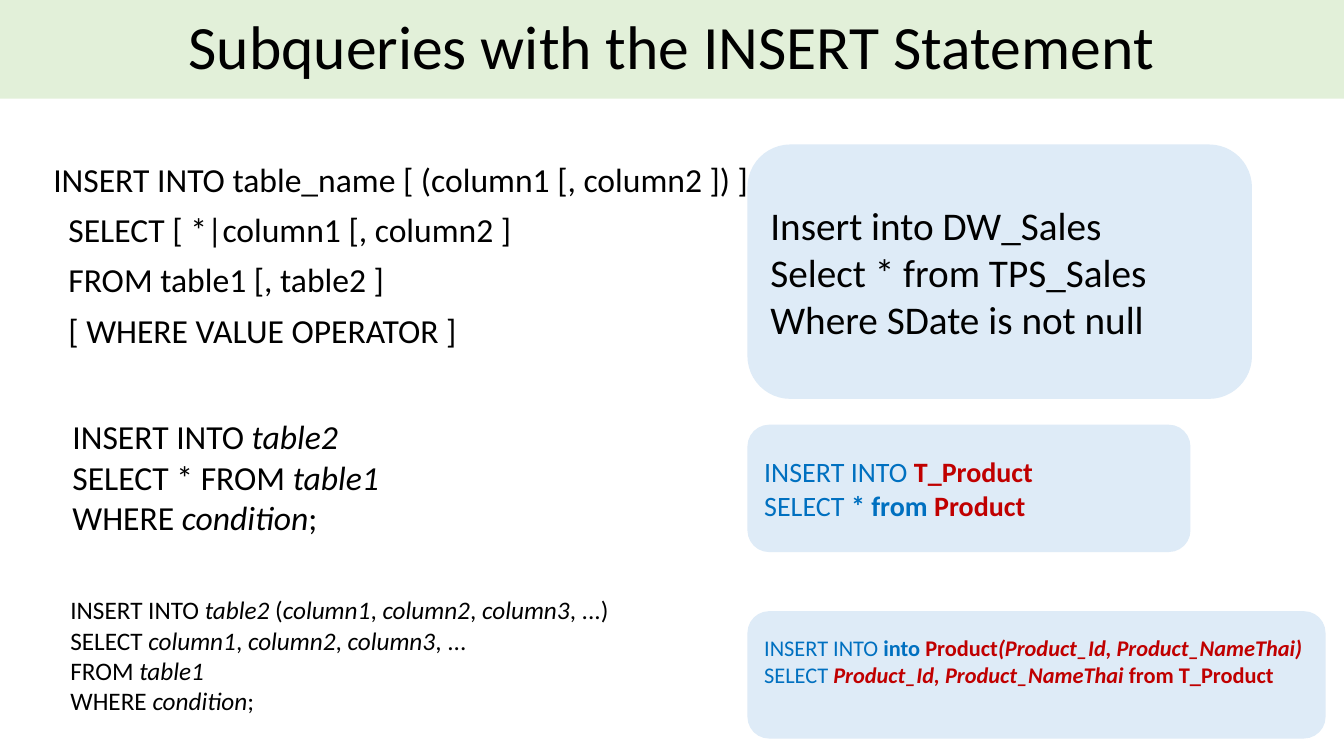
"""Build a slide on subqueries with the INSERT statement."""
from pptx import Presentation
from pptx.dml.color import RGBColor
from pptx.enum.shapes import MSO_SHAPE as Shape
from pptx.enum.text import MSO_ANCHOR as Anchor, PP_ALIGN as Align
from pptx.util import Inches, Pt

FONT = "Calibri"
BLACK = RGBColor(0x00, 0x00, 0x00)
BLUE = RGBColor(0x00, 0x70, 0xC0)
RED = RGBColor(0xC0, 0x00, 0x00)
PALE_GREEN = RGBColor(0xE2, 0xF0, 0xD9)
PALE_BLUE = RGBColor(0xDE, 0xEB, 0xF7)

PLAIN = (BLACK, False, False)
ITALIC = (BLACK, False, True)
KEYWORD = (BLUE, False, False)
BOLD_KEYWORD = (BLUE, True, False)
NAME = (RED, True, False)
ITALIC_NAME = (RED, True, True)

EXAMPLE_LEFT = 7.42

GENERAL_SYNTAX = [
    [("INSERT INTO table_name [ (column1 [, column2 ]) ]", PLAIN)],
    [("SELECT [ *|column1 [, column2 ]", PLAIN)],
    [("FROM table1 [, table2 ]", PLAIN)],
    [("[ WHERE VALUE OPERATOR ]", PLAIN)],
]
WHERE_LINE = [("WHERE ", PLAIN), ("condition", ITALIC), (";", PLAIN)]
COLUMNS = [("column1", ITALIC), (", ", PLAIN), ("column2", ITALIC),
           (", ", PLAIN), ("column3", ITALIC)]
ALL_COLUMNS_SYNTAX = [
    [("INSERT INTO ", PLAIN), ("table2", ITALIC)],
    [("SELECT * FROM ", PLAIN), ("table1", ITALIC)],
    WHERE_LINE,
]
SOME_COLUMNS_SYNTAX = [
    [("INSERT INTO ", PLAIN), ("table2 ", ITALIC), ("(", PLAIN), *COLUMNS, (", ...)", PLAIN)],
    [("SELECT ", PLAIN), *COLUMNS, (", ...", PLAIN)],
    [("FROM ", PLAIN), ("table1", ITALIC)],
    WHERE_LINE,
]
SALES_EXAMPLE = [
    [("Insert into DW_Sales", PLAIN)],
    [("Select * from TPS_Sales", PLAIN)],
    [("Where SDate is not null", PLAIN)],
]
ALL_COLUMNS_EXAMPLE = [
    [("INSERT INTO ", KEYWORD), ("T_Product", NAME)],
    [("SELECT ", KEYWORD), ("* from ", BOLD_KEYWORD), ("Product", NAME)],
]
SOME_COLUMNS_EXAMPLE = [
    [("INSERT INTO ", KEYWORD), ("into ", BOLD_KEYWORD), ("Product", NAME),
     ("(Product_Id, Product_NameThai)", ITALIC_NAME)],
    [("SELECT ", KEYWORD), ("Product_Id, Product_NameThai ", ITALIC_NAME),
     ("from T_Product", NAME)],
]


def write_lines(text_frame, lines, size, align=Align.LEFT):
    """Write one paragraph per line and return the paragraphs."""
    text_frame.word_wrap = True
    paragraphs = []
    for index, line in enumerate(lines):
        paragraph = text_frame.add_paragraph() if index else text_frame.paragraphs[0]
        paragraph.alignment = align
        for text, (color, bold, italic) in line:
            run = paragraph.add_run()
            run.text = text
            run.font.name = FONT
            run.font.size = Pt(size)
            run.font.color.rgb = color
            run.font.bold = bold
            run.font.italic = italic
        paragraphs.append(paragraph)
    return paragraphs


def add_panel(slide, kind, box, color):
    """Add a plain filled shape with vertically centred text."""
    shape = slide.shapes.add_shape(kind, *map(Inches, box))
    shape.shadow.inherit = False
    shape.fill.solid()
    shape.fill.fore_color.rgb = color
    shape.line.color.rgb = color
    shape.line.width = Pt(1)
    shape.text_frame.vertical_anchor = Anchor.MIDDLE
    return shape


def add_title(slide, box, title):
    """Add the title band."""
    band = add_panel(slide, Shape.RECTANGLE, box, PALE_GREEN)
    band.line.fill.background()
    paragraph, = write_lines(band.text_frame, [[(title, PLAIN)]], 44, Align.CENTER)
    paragraph.line_spacing = 0.9


def add_syntax(slide, box, lines, size):
    """Add a syntax text block and return its paragraphs."""
    text_box = slide.shapes.add_textbox(*map(Inches, box))
    return write_lines(text_box.text_frame, lines, size)


def add_general_syntax(slide, box):
    """Add the general syntax with its clauses indented."""
    for index, paragraph in enumerate(add_syntax(slide, box, GENERAL_SYNTAX, 24)):
        paragraph.line_spacing = 0.9
        paragraph.space_before = Pt(10)
        indent = Inches(0.23 if index else 0.08)
        paragraph._p.get_or_add_pPr().set("marL", str(indent))


def add_example(slide, box, lines, size, bottom_margin=0.05):
    """Add a rounded panel holding an example statement."""
    panel = add_panel(slide, Shape.ROUNDED_RECTANGLE, box, PALE_BLUE)
    panel.text_frame.margin_bottom = Inches(bottom_margin)
    write_lines(panel.text_frame, lines, size)


def main():
    """Build and save the presentation."""
    presentation = Presentation()
    presentation.slide_width = Inches(13.33)
    presentation.slide_height = Inches(7.5)
    slide = presentation.slides.add_slide(presentation.slide_layouts[6])
    add_title(slide, (0, 0, 13.33, 0.98), "Subqueries with the INSERT Statement")
    add_general_syntax(slide, (0.35, 1.57, 7.21, 2.05))
    add_example(slide, (EXAMPLE_LEFT, 1.44, 4.99, 2.51), SALES_EXAMPLE, 28)
    add_syntax(slide, (0.62, 4.08, 6.67, 1.31), ALL_COLUMNS_SYNTAX, 24)
    add_syntax(slide, (0.6, 5.85, 6.67, 1.31), SOME_COLUMNS_SYNTAX, 18)
    add_example(slide, (EXAMPLE_LEFT, 4.22, 4.38, 1.25), ALL_COLUMNS_EXAMPLE, 20)
    add_example(slide, (EXAMPLE_LEFT, 6.07, 5.72, 1.25), SOME_COLUMNS_EXAMPLE, 16, 0.32)
    presentation.save("out.pptx")


if __name__ == "__main__":
    main()
